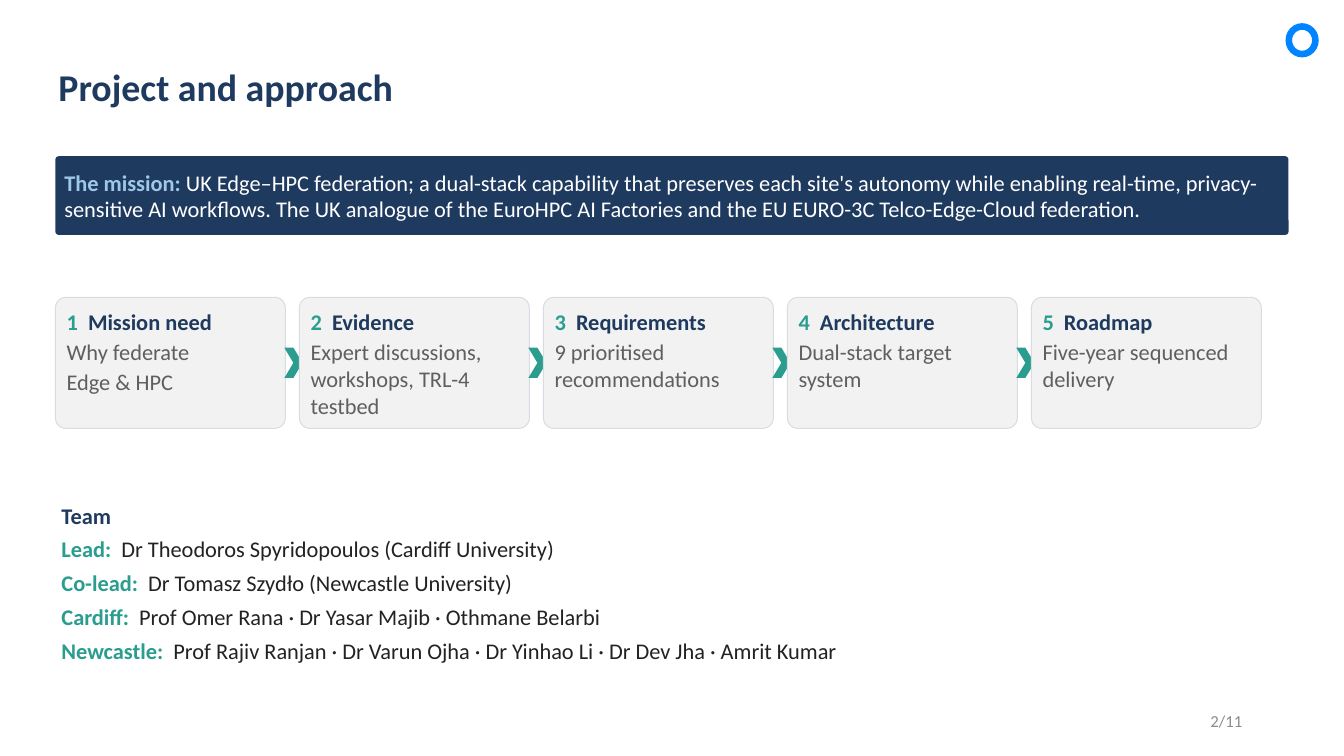
"""Build the project and approach slide."""
from pptx import Presentation
from pptx.dml.color import RGBColor
from pptx.enum.shapes import MSO_SHAPE as Shape
from pptx.enum.text import MSO_ANCHOR as Anchor, PP_ALIGN as Align
from pptx.util import Inches, Pt

NAVY = RGBColor(0x1F, 0x3A, 0x5F)
TEAL = RGBColor(0x2A, 0x9D, 0x8F)
SKY = RGBColor(0x9F, 0xC8, 0xE8)
WHITE = RGBColor(0xFF, 0xFF, 0xFF)
PALE = RGBColor(0xF2, 0xF2, 0xF2)
EDGE = RGBColor(0xD8, 0xDD, 0xE3)
GREY = RGBColor(0x5F, 0x5F, 0x5F)
INK = RGBColor(0x22, 0x22, 0x22)
DIM = RGBColor(0x8C, 0x8C, 0x8C)
BLUE = RGBColor(0x00, 0x84, 0xFF)

TITLE = "Project and approach"
MISSION = (
    "The mission: ",
    "UK Edge–HPC federation; a dual-stack capability that preserves each site's "
    "autonomy while enabling real-time, privacy-sensitive AI workflows. The UK "
    "analogue of the EuroHPC AI Factories and the EU EURO-3C Telco-Edge-Cloud "
    "federation.",
)
STEPS = [
    ("Mission need", ["Why federate", "Edge & HPC"]),
    ("Evidence", ["Expert discussions, workshops, TRL-4 testbed"]),
    ("Requirements", ["9 prioritised recommendations"]),
    ("Architecture", ["Dual-stack target system"]),
    ("Roadmap", ["Five-year sequenced delivery"]),
]
TEAM = [
    ("Lead", "Dr Theodoros Spyridopoulos (Cardiff University)"),
    ("Co-lead", "Dr Tomasz Szydło (Newcastle University)"),
    ("Cardiff", "Prof Omer Rana · Dr Yasar Majib · Othmane Belarbi"),
    ("Newcastle", "Prof Rajiv Ranjan · Dr Varun Ojha · Dr Yinhao Li · "
                  "Dr Dev Jha · Amrit Kumar"),
]
PAGE = "2/11"

LEFT, TOP = 0.55, 2.95
WIDTH, HEIGHT, PITCH = 2.28, 1.3, 2.42
TIP_W, TIP_H = 0.18, 0.3
THIN = (0.03, 0.01)


def write(shape, paras, inset, size=16, after=0, anchor=Anchor.TOP, align=Align.LEFT):
    frame = shape.text_frame
    frame.word_wrap = True
    frame.vertical_anchor = anchor
    frame.margin_left = frame.margin_right = Inches(inset[0])
    frame.margin_top = frame.margin_bottom = Inches(inset[1])
    for i, runs in enumerate(paras):
        para = frame.add_paragraph() if i else frame.paragraphs[0]
        para.alignment = align
        para.space_after = Pt(after)
        for text, color, bold in runs:
            run = para.add_run()
            run.text = text
            font = run.font
            font.name, font.size, font.bold = "Calibri", Pt(size), bold
            font.color.rgb = color


def draw(slide, kind, box, fill, line=None, adj=None):
    shape = slide.shapes.add_shape(kind, *map(Inches, box))
    shape.shadow.inherit = False
    shape.fill.solid()
    shape.fill.fore_color.rgb = fill
    if line is None:
        shape.line.fill.background()
    else:
        shape.line.color.rgb = line
        shape.line.width = Pt(0.75)
    if adj is not None:
        shape.adjustments[0] = adj
    return shape


def label(slide, box, paras, inset=THIN, **style):
    write(slide.shapes.add_textbox(*map(Inches, box)), paras, inset, **style)


def main():
    deck = Presentation()
    deck.slide_width, deck.slide_height = Inches(13.33), Inches(7.5)
    slide = deck.slides.add_slide(deck.slide_layouts[6])

    label(slide, (LEFT, 0.62, 12.2, 0.85), [[(TITLE, NAVY, True)]], size=27)
    banner = draw(slide, Shape.ROUNDED_RECTANGLE, (LEFT, 1.55, 12.23, 0.78), NAVY, adj=0.04)
    lead, body = MISSION
    write(banner, [[(lead, SKY, True), (body, WHITE, False)]], (0.08, 0.04),
          after=2, anchor=Anchor.MIDDLE)

    for i, (name, lines) in enumerate(STEPS):
        x = LEFT + i * PITCH
        if i:
            mid = x - (PITCH - WIDTH) / 2
            tip = (mid - TIP_W / 2 + 0.01, TOP + (HEIGHT - TIP_H) / 2, TIP_W, TIP_H)
            draw(slide, Shape.CHEVRON, tip, TEAL)
        card = draw(slide, Shape.ROUNDED_RECTANGLE, (x, TOP, WIDTH, HEIGHT), PALE, EDGE, 0.08)
        head = [(f"{i + 1}  ", TEAL, True), (name, NAVY, True)]
        write(card, [head] + [[(text, GREY, False)] for text in lines], (0.08, 0.08), after=2)

    label(slide, (0.58, 4.97, 12.2, 0.3), [[("Team", NAVY, True)]], after=4)
    people = [[(f"{role}:  ", TEAL, True), (names, INK, False)] for role, names in TEAM]
    label(slide, (0.58, 5.3, 12.2, 1.32), people, after=5)
    label(slide, (9.42, 6.95, 3, 0.4), [[(PAGE, DIM, False)]], (0.1, 0.05),
          size=12, anchor=Anchor.MIDDLE, align=Align.RIGHT)
    draw(slide, Shape.DONUT, (12.75, 0.23, 0.33, 0.34), BLUE, adj=0.2)
    deck.save("out.pptx")


if __name__ == "__main__":
    main()
